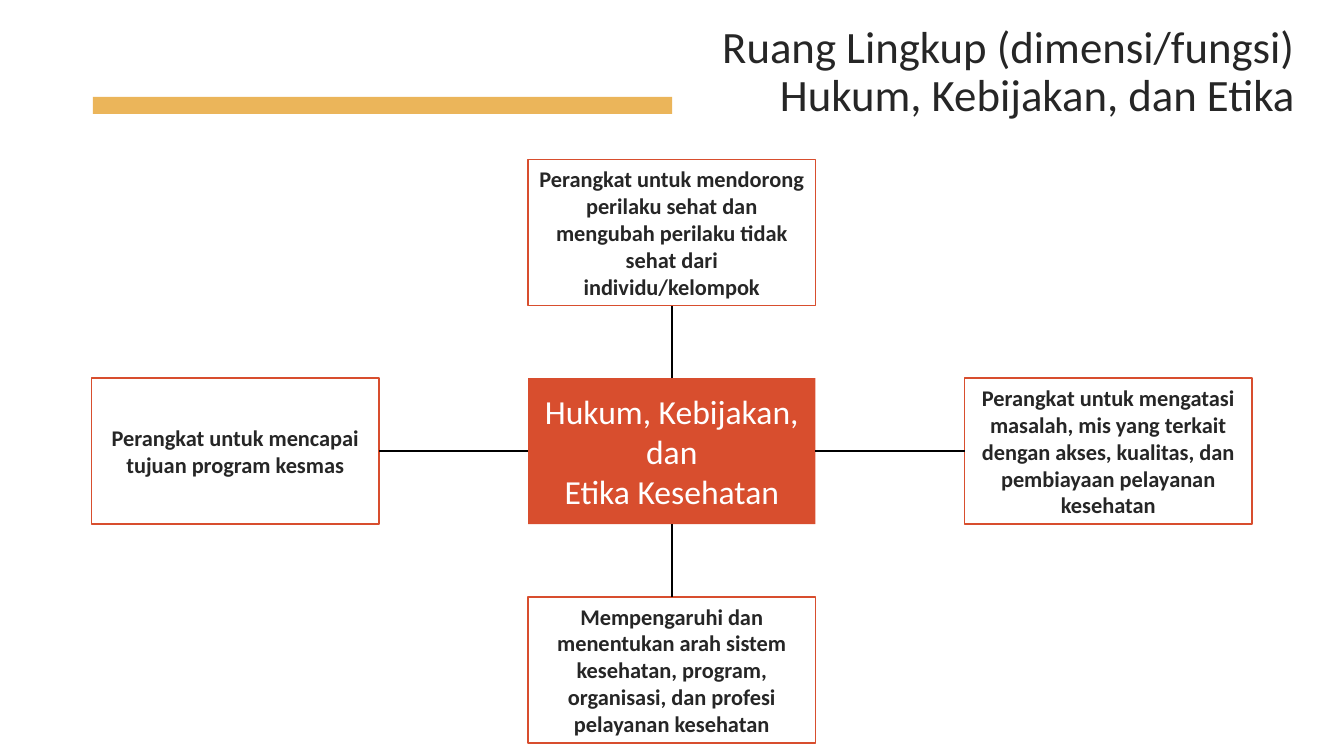
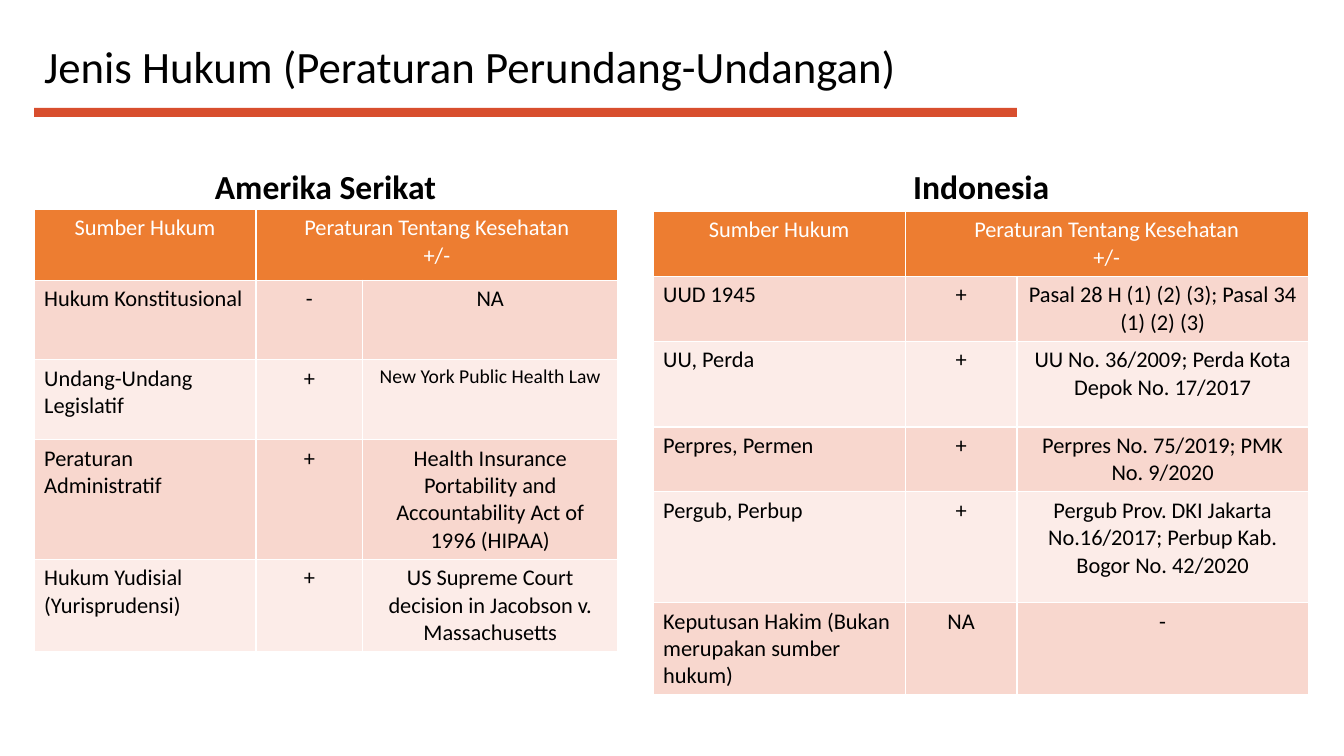
import dataclasses

import pptx
import pptx.dml.color
import pptx.enum.shapes
import pptx.enum.text
import pptx.oxml
import pptx.oxml.ns
import pptx.util

Cm = pptx.util.Cm
ALIGN = pptx.enum.text.PP_ALIGN
ANCHOR = pptx.enum.text.MSO_ANCHOR


@dataclasses.dataclass(frozen=True)
class Theme:
    font: str = "Calibri"
    title: float = 32
    heading: float = 24
    body: float = 16
    small: float = 14
    black: str = "000000"
    dark: str = "262626"
    white: str = "FFFFFF"
    red: str = "D84E2E"
    gold: str = "EBB55A"
    header: str = "ED7D31"
    bands: tuple = ("F8D7CE", "FCECE8")
    thin: float = 1
    link: float = 1.5


THEME = Theme()
SLIDE_SIZE = (33.87, 19.05)

SCOPE_TITLE = "Ruang Lingkup (dimensi/fungsi) Hukum, Kebijakan, dan Etika"
SCOPE_CENTER = ["Hukum, Kebijakan, dan", "Etika Kesehatan"]
BOX_SIZE = (7.24, 3.68)
CENTER = (16.93, 11.37)
STEP = (11, 5.51)
TOP, LEFT, BOTTOM, RIGHT = range(4)
SCOPE_BRANCHES = [
    (1, 0, RIGHT, LEFT,
     "Perangkat untuk mengatasi masalah, mis yang terkait dengan akses, "
     "kualitas, dan pembiayaan pelayanan kesehatan"),
    (-1, 0, LEFT, RIGHT, "Perangkat untuk mencapai tujuan program kesmas"),
    (0, 1, BOTTOM, TOP,
     "Mempengaruhi dan menentukan arah sistem kesehatan, program, "
     "organisasi, dan profesi pelayanan kesehatan"),
    (0, -1, TOP, BOTTOM,
     "Perangkat untuk mendorong perilaku sehat dan mengubah perilaku tidak "
     "sehat dari individu/kelompok"),
]

LAW_TITLE = "Jenis Hukum (Peraturan Perundang-Undangan)"
LAW_HEADER = ("Sumber Hukum", ["Peraturan Tentang Kesehatan", "+/-"])
SMALL_ENTRIES = {"New York Public Health Law"}
LAW_TABLES = [
    {
        "heading": "Amerika Serikat",
        "heading_box": (3.71, 4.11, 8.99, 1.17),
        "position": (0.86, 5.28),
        "columns": (5.59, 2.69, 6.43),
        "heights": (1.78, 2.01, 2.01, 2.01, 2.16),
        "rows": [
            ("Hukum Konstitusional", "-", "NA"),
            ("Undang-Undang Legislatif", "+", "New York Public Health Law"),
            ("Peraturan Administratif", "+",
             "Health Insurance Portability and Accountability Act of 1996 (HIPAA)"),
            ("Hukum Yudisial (Yurisprudensi)", "+",
             "US Supreme Court decision in Jacobson v. Massachusetts"),
        ],
    },
    {
        "heading": "Indonesia",
        "heading_box": (18.85, 4.11, 11.76, 1.17),
        "position": (16.46, 5.33),
        "columns": (6.35, 2.82, 7.34),
        "heights": (1.5, 1.5, 2.16, 1.5, 2.79, 2.16),
        "rows": [
            ("UUD 1945", "+", "Pasal 28 H (1) (2) (3); Pasal 34 (1) (2) (3)"),
            ("UU, Perda", "+", "UU No. 36/2009; Perda Kota Depok No. 17/2017"),
            ("Perpres, Permen", "+", "Perpres No. 75/2019; PMK No. 9/2020"),
            ("Pergub, Perbup", "+",
             "Pergub Prov. DKI Jakarta No.16/2017; Perbup Kab. Bogor No. 42/2020"),
            ("Keputusan Hakim (Bukan merupakan sumber hukum)", "NA", "-"),
        ],
    },
]


def rgb(color):
    return pptx.dml.color.RGBColor.from_string(color)


def write(text_frame, text, size=THEME.body, color=THEME.black, bold=False,
          align=ALIGN.CENTER, anchor=ANCHOR.MIDDLE, spacing=1.0):
    text_frame.word_wrap = True
    text_frame.auto_size = pptx.enum.text.MSO_AUTO_SIZE.NONE
    text_frame.vertical_anchor = anchor
    lines = [text] if isinstance(text, str) else text
    for index, line in enumerate(lines):
        paragraph = text_frame.add_paragraph() if index else text_frame.paragraphs[0]
        paragraph.alignment = align
        paragraph.line_spacing = spacing
        run = paragraph.add_run()
        run.text = line
        run.font.name = THEME.font
        run.font.size = pptx.util.Pt(size)
        run.font.bold = bold
        run.font.color.rgb = rgb(color)


def add_titled_slide(presentation, title, box, **text_format):
    slide = presentation.slides.add_slide(presentation.slide_layouts[5])
    shape = slide.shapes.title
    shape.left, shape.top, shape.width, shape.height = map(Cm, box)
    write(shape.text_frame, title, size=THEME.title, **text_format)
    return slide


def add_box(slide, box, fill=None, line=None):
    shape = slide.shapes.add_shape(
        pptx.enum.shapes.MSO_SHAPE.RECTANGLE, *map(Cm, box))
    shape.shadow.inherit = False
    if fill:
        shape.fill.solid()
        shape.fill.fore_color.rgb = rgb(fill)
    else:
        shape.fill.background()
    if line:
        shape.line.color.rgb = rgb(line)
        shape.line.width = pptx.util.Pt(THEME.thin)
    else:
        shape.line.fill.background()
    return shape


def add_diagram_box(slide, across, down, text, fill=None, line=None, **text_format):
    width, height = BOX_SIZE
    left = CENTER[0] + across * STEP[0] - width / 2
    top = CENTER[1] + down * STEP[1] - height / 2
    shape = add_box(slide, (left, top, width, height), fill, line)
    write(shape.text_frame, text, **text_format)
    return shape


def link_boxes(slide, start, start_site, end, end_site):
    connector = slide.shapes.add_connector(
        pptx.enum.shapes.MSO_CONNECTOR.STRAIGHT, 0, 0, 0, 0)
    connector.begin_connect(start, start_site)
    connector.end_connect(end, end_site)
    connector.line.color.rgb = rgb(THEME.black)
    connector.line.width = pptx.util.Pt(THEME.link)
    connector._element.spPr.append(pptx.oxml.parse_xml(
        f"<a:effectLst {pptx.oxml.ns.nsdecls('a')}/>"))


def format_cell(cell, fill):
    properties = cell._tc.get_or_add_tcPr()
    for side in ("lnL", "lnR", "lnT", "lnB"):
        properties.append(pptx.oxml.parse_xml(
            f"<a:{side} {pptx.oxml.ns.nsdecls('a')} w='{pptx.util.Pt(THEME.thin)}'>"
            f"<a:solidFill><a:srgbClr val='{THEME.white}'/></a:solidFill></a:{side}>"))
    cell.fill.solid()
    cell.fill.fore_color.rgb = rgb(fill)


def add_law_table(slide, content):
    columns, heights = content["columns"], content["heights"]
    table = slide.shapes.add_table(
        len(heights), len(columns), *map(Cm, content["position"]),
        Cm(sum(columns)), Cm(sum(heights))).table
    for column, width in zip(table.columns, columns):
        column.width = Cm(width)
    for row, height in zip(table.rows, heights):
        row.height = Cm(height)
    table.cell(0, 1).merge(table.cell(0, 2))
    for row_index, entries in enumerate([(*LAW_HEADER, None), *content["rows"]]):
        is_header = row_index == 0
        fill = THEME.header if is_header else THEME.bands[(row_index - 1) % 2]
        for column_index, entry in enumerate(entries):
            cell = table.cell(row_index, column_index)
            format_cell(cell, fill)
            if entry is None:
                continue
            centered = is_header or column_index > 0
            small = isinstance(entry, str) and entry in SMALL_ENTRIES
            write(cell.text_frame, entry,
                  size=THEME.small if small else THEME.body,
                  color=THEME.white if is_header else THEME.black,
                  align=ALIGN.CENTER if centered else ALIGN.LEFT,
                  anchor=ANCHOR.TOP)


def build_scope_slide(presentation):
    slide = add_titled_slide(
        presentation, SCOPE_TITLE, (14.83, 0, 18.06, 3.68),
        color=THEME.dark, align=ALIGN.RIGHT, spacing=0.9)
    add_box(slide, (2.34, 2.44, 14.6, 0.43), fill=THEME.gold)
    center = add_diagram_box(slide, 0, 0, SCOPE_CENTER, fill=THEME.red,
                             size=THEME.heading, color=THEME.white)
    for across, down, center_site, branch_site, text in SCOPE_BRANCHES:
        branch = add_diagram_box(slide, across, down, text, line=THEME.red,
                                 color=THEME.dark, bold=True)
        link_boxes(slide, center, center_site, branch, branch_site)


def build_law_slide(presentation):
    slide = add_titled_slide(presentation, LAW_TITLE, (0.86, 0.84, 25.81, 1.63),
                             align=ALIGN.LEFT, anchor=ANCHOR.TOP)
    add_box(slide, (0.86, 2.72, 24.77, 0.23), fill=THEME.red)
    for content in LAW_TABLES:
        add_law_table(slide, content)
        heading = slide.shapes.add_textbox(*map(Cm, content["heading_box"]))
        write(heading.text_frame, content["heading"], size=THEME.heading, bold=True)


def main():
    presentation = pptx.Presentation()
    presentation.slide_width, presentation.slide_height = map(Cm, SLIDE_SIZE)
    build_scope_slide(presentation)
    build_law_slide(presentation)
    presentation.save("out.pptx")


if __name__ == "__main__":
    main()
